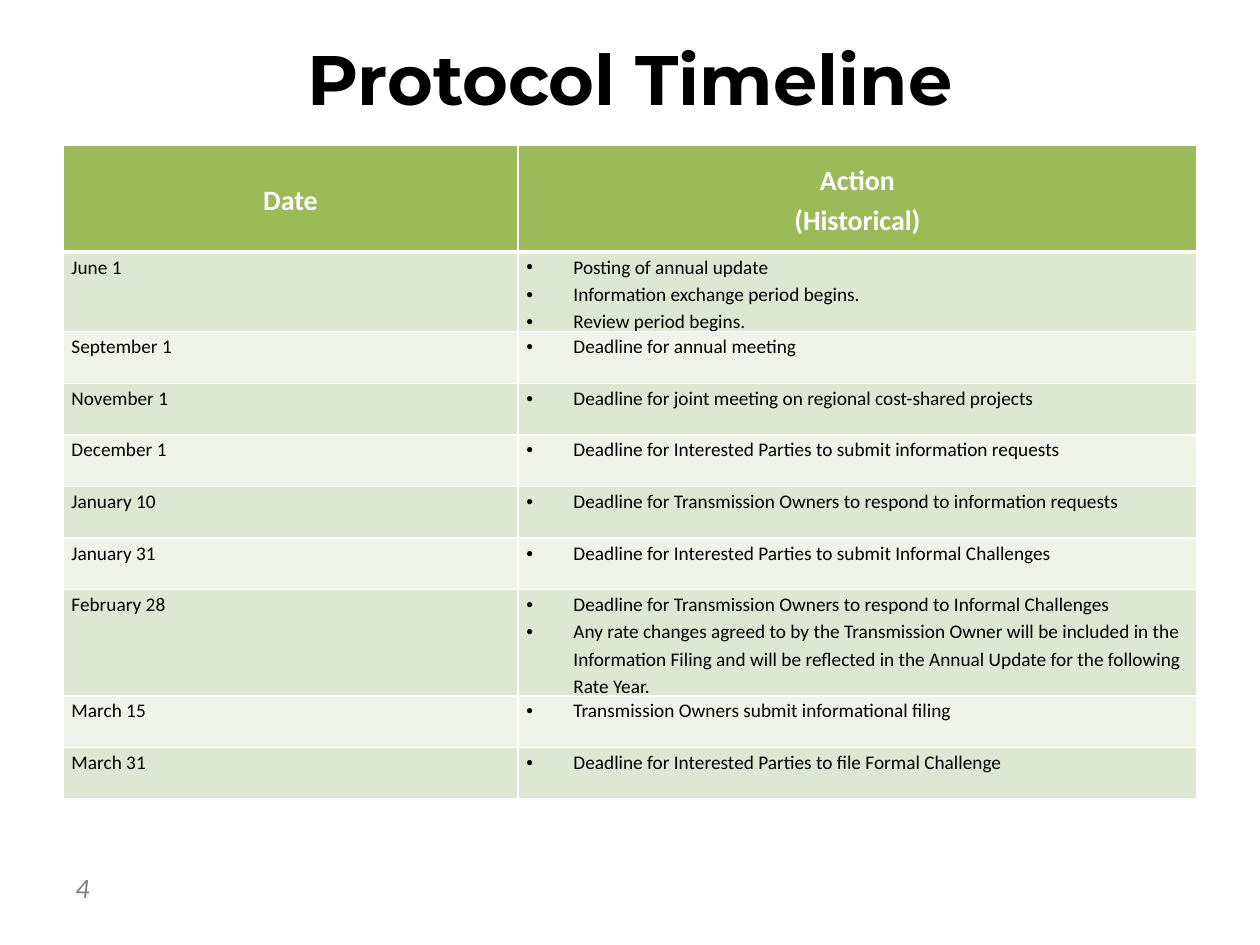
from lxml import etree
from pptx import Presentation
from pptx import util as u
from pptx.dml.color import RGBColor
from pptx.enum import text
from pptx.oxml import ns

COLORS = {
    "header": "9BBB59", "band_dark": "DEE7D1", "band_light": "EFF3EA",
    "white": "FFFFFF", "black": "000000", "gray": "7F7F7F",
}
TITLE = "Protocol Timeline"
PAGE_NUMBER = "4"
HEADINGS = [["Date"], ["Action", "(Historical)"]]
TIMELINE = [
    ("June 1", ["Posting of annual update",
                "Information exchange period begins.",
                "Review period begins."]),
    ("September 1", ["Deadline for annual meeting"]),
    ("November 1", ["Deadline for joint meeting on regional cost-shared projects"]),
    ("December 1", ["Deadline for Interested Parties to submit information requests"]),
    ("January 10", ["Deadline for Transmission Owners to respond to information requests"]),
    ("January 31", ["Deadline for Interested Parties to submit Informal Challenges"]),
    ("February 28", ["Deadline for Transmission Owners to respond to Informal Challenges",
                     "Any rate changes agreed to by the Transmission Owner will be included "
                     "in the Information Filing and will be reflected in the Annual Update "
                     "for the following Rate Year."]),
    ("March 15", ["Transmission Owners submit informational filing"]),
    ("March 31", ["Deadline for Interested Parties to file Formal Challenge"]),
]
LEFT, WIDTH = 1.27, 22.86
COLUMNS = [9.17, 13.69]
HEADER_HEIGHT, ROW_HEIGHT = 2.16, 1.04
BULLET_INDENT = 0.95
ALIGN = text.PP_ALIGN


def write(frame, lines, size, color="black", font="Calibri", bold=False,
          italic=False, align=ALIGN.LEFT, spacing=None, bullet=False):
    frame.word_wrap = True
    for index, line in enumerate(lines):
        paragraph = frame.add_paragraph() if index else frame.paragraphs[0]
        paragraph.alignment = align
        if spacing:
            paragraph.line_spacing = spacing
        if bullet:
            properties = paragraph._p.get_or_add_pPr()
            indent = u.Cm(BULLET_INDENT)
            properties.set("marL", str(indent))
            properties.set("indent", str(-indent))
            etree.SubElement(properties, ns.qn("a:buFont"), typeface="Arial")
            etree.SubElement(properties, ns.qn("a:buChar"), char="•")
        run = paragraph.add_run()
        run.text = line
        run.font.name = font
        run.font.size = u.Pt(size)
        run.font.bold = bold
        run.font.italic = italic
        run.font.color.rgb = RGBColor.from_string(COLORS[color])


def add_text(slide, top, width, height, lines, **style):
    box = slide.shapes.add_textbox(u.Cm(LEFT), u.Cm(top), u.Cm(width), u.Cm(height))
    box.text_frame.vertical_anchor = text.MSO_ANCHOR.MIDDLE
    write(box.text_frame, lines, **style)


def style_cell(cell, fill, top=1, bottom=1):
    properties = cell._tc.get_or_add_tcPr()
    for side, points in (("L", 1), ("R", 1), ("T", top), ("B", bottom)):
        line = etree.SubElement(properties, ns.qn(f"a:ln{side}"), w=str(u.Pt(points)))
        solid = etree.SubElement(line, ns.qn("a:solidFill"))
        etree.SubElement(solid, ns.qn("a:srgbClr"), val=COLORS["white"])
    cell.fill.solid()
    cell.fill.fore_color.rgb = RGBColor.from_string(COLORS[fill])
    cell.margin_left = cell.margin_right = u.Cm(0.17)
    cell.margin_top = cell.margin_bottom = 0


def add_timeline(slide):
    height = HEADER_HEIGHT + ROW_HEIGHT * len(TIMELINE)
    table = slide.shapes.add_table(
        len(TIMELINE) + 1, len(COLUMNS),
        u.Cm(LEFT), u.Cm(2.92), u.Cm(WIDTH), u.Cm(height)).table
    table.horz_banding = False
    for column, width in zip(table.columns, COLUMNS):
        column.width = u.Cm(width)
    for index, row in enumerate(table.rows):
        row.height = u.Cm(ROW_HEIGHT if index else HEADER_HEIGHT)
    for column, lines in enumerate(HEADINGS):
        cell = table.cell(0, column)
        style_cell(cell, "header", bottom=3)
        cell.vertical_anchor = text.MSO_ANCHOR.MIDDLE
        write(cell.text_frame, lines, 16, color="white", bold=True,
              align=ALIGN.CENTER, spacing=1.15)
    for row, (date, actions) in enumerate(TIMELINE, start=1):
        fill = "band_dark" if row % 2 else "band_light"
        for column, lines in enumerate(([date], actions)):
            cell = table.cell(row, column)
            style_cell(cell, fill, top=3 if row == 1 else 1)
            write(cell.text_frame, lines, 11, spacing=1.15, bullet=column == 1,
                  align=ALIGN.LEFT if column else ALIGN.JUSTIFY)


def main():
    presentation = Presentation()
    presentation.slide_width, presentation.slide_height = u.Cm(25.4), u.Cm(19.05)
    slide = presentation.slides.add_slide(presentation.slide_layouts[6])
    add_text(slide, 17.42, 4.29, 0.94, [PAGE_NUMBER], size=16, color="gray", italic=True)
    add_text(slide, 0.69, WIDTH, 1.75, [TITLE], size=40, font="Montserrat",
             bold=True, align=ALIGN.CENTER)
    add_timeline(slide)
    presentation.save("out.pptx")


if __name__ == "__main__":
    main()
